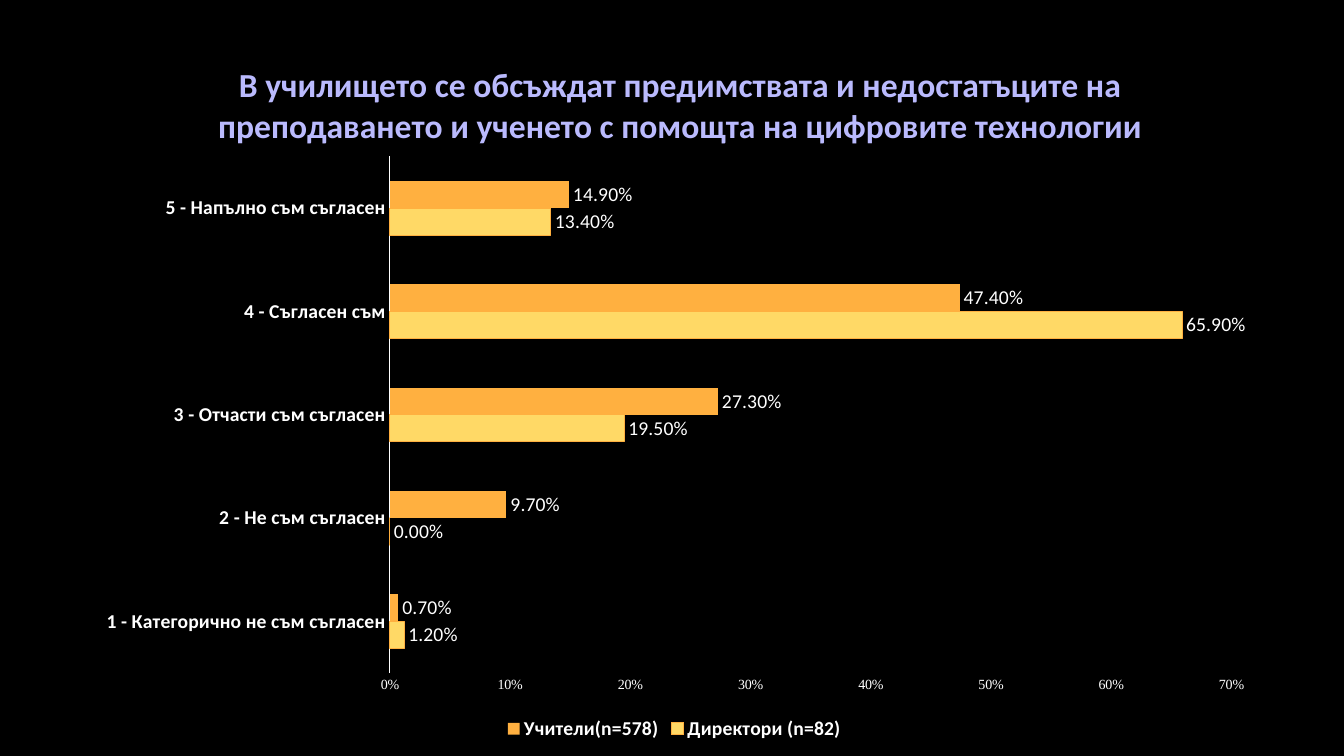
"""Build a slide with a bar chart of teachers' and principals' agreement."""
from lxml import etree
from pptx import Presentation
from pptx.chart.data import CategoryChartData
from pptx.dml.color import RGBColor
from pptx.enum import chart as kinds
from pptx.oxml import ns
from pptx.util import Cm, Pt

TITLE = ("В училището се обсъждат предимствата и недостатъците на "
         "преподаването и ученето с помощта на цифровите технологии")
ANSWERS = ["1 - Категорично не съм съгласен", "2 - Не съм съгласен",
           "3 - Отчасти съм съгласен", "4 - Съгласен съм",
           "5 - Напълно съм съгласен"]
GROUPS = [
    ("Директори (n=82)", [0.012, 0, 0.195, 0.659, 0.134], "FFD966", "FFB040"),
    ("Учители(n=578)", [0.007, 0.097, 0.273, 0.474, 0.149], "FFB040", None),
]
WHITE = "FFFFFF"
TITLE_PLACE = {"x": 0.11, "y": 0.04}
PLOT_PLACE = {"x": 0.26, "y": 0.18, "w": 0.71, "h": 0.72}


def color(value):
    return RGBColor.from_string(value)


def style(font, size, bold=False, name="Calibri", value=WHITE):
    font.size, font.bold, font.name = Pt(size), bold, name
    font.color.rgb = color(value)


def place(parent, numbers, inner=False):
    """Give a chart part a fixed place, in fractions of the chart."""
    for old in parent.findall(ns.qn("c:layout")):
        parent.remove(old)
    layout = etree.Element(ns.qn("c:layout"))
    manual = etree.SubElement(layout, ns.qn("c:manualLayout"))
    settings = [("layoutTarget", "inner")] if inner else []
    settings += [(f"{key}Mode", "edge") for key in "xy"]
    settings += list(numbers.items())
    for tag, value in settings:
        etree.SubElement(manual, ns.qn(f"c:{tag}")).set("val", str(value))
    text = parent.find(ns.qn("c:tx"))
    parent.insert(0 if text is None else 1, layout)


def add_agreement_chart(page):
    data = CategoryChartData(number_format="0.00%")
    data.categories = ANSWERS
    for name, values, _, _ in GROUPS:
        data.add_series(name, values)
    chart = page.shapes.add_chart(
        kinds.XL_CHART_TYPE.BAR_CLUSTERED,
        Cm(2.06), Cm(0.69), Cm(29.87), Cm(18.08), data).chart
    style(chart.font, 10)

    chart.has_title = True
    para = chart.chart_title.text_frame.paragraphs[0]
    para.text = TITLE
    style(para.font, 24, True, value="BABAFD")
    chart.chart_title.include_in_layout = False
    place(chart.chart_title._element, TITLE_PLACE)
    place(chart._chartSpace.chart.plotArea, PLOT_PLACE, inner=True)

    chart.has_legend = True
    chart.legend.position = kinds.XL_LEGEND_POSITION.BOTTOM
    chart.legend.include_in_layout = False
    style(chart.legend.font, 14, True)

    answers, share = chart.category_axis, chart.value_axis
    for axis in (answers, share):
        axis.has_major_gridlines = False
        axis.major_tick_mark = kinds.XL_TICK_MARK.NONE
    style(answers.tick_labels.font, 14, True)
    answers.format.line.color.rgb = color(WHITE)
    answers.format.line.width = Pt(0.75)
    style(share.tick_labels.font, 10, name="Times New Roman")
    share.tick_labels.number_format = "0%"
    share.tick_labels.number_format_is_linked = False
    share.minimum_scale, share.maximum_scale, share.major_unit = 0, 0.7, 0.1
    share.format.line.fill.background()

    plot = chart.plots[0]
    plot.gap_width, plot.overlap = 182, 0
    plot.vary_by_categories = False
    for series, (_, _, fill, line) in zip(plot.series, GROUPS):
        series.format.fill.solid()
        series.format.fill.fore_color.rgb = color(fill)
        if line:
            series.format.line.color.rgb = color(line)
            series.format.line.width = Pt(0.75)
        else:
            series.format.line.fill.background()
        labels = series.data_labels
        labels.show_value = True
        labels.number_format, labels.number_format_is_linked = "0.00%", False
        labels.position = kinds.XL_LABEL_POSITION.OUTSIDE_END
        style(labels.font, 14)


def main():
    deck = Presentation()
    deck.slide_width, deck.slide_height = Cm(33.87), Cm(19.05)
    page = deck.slides.add_slide(deck.slide_layouts[6])
    page.background.fill.solid()
    page.background.fill.fore_color.rgb = color("000000")
    add_agreement_chart(page)
    deck.save("out.pptx")


if __name__ == "__main__":
    main()
